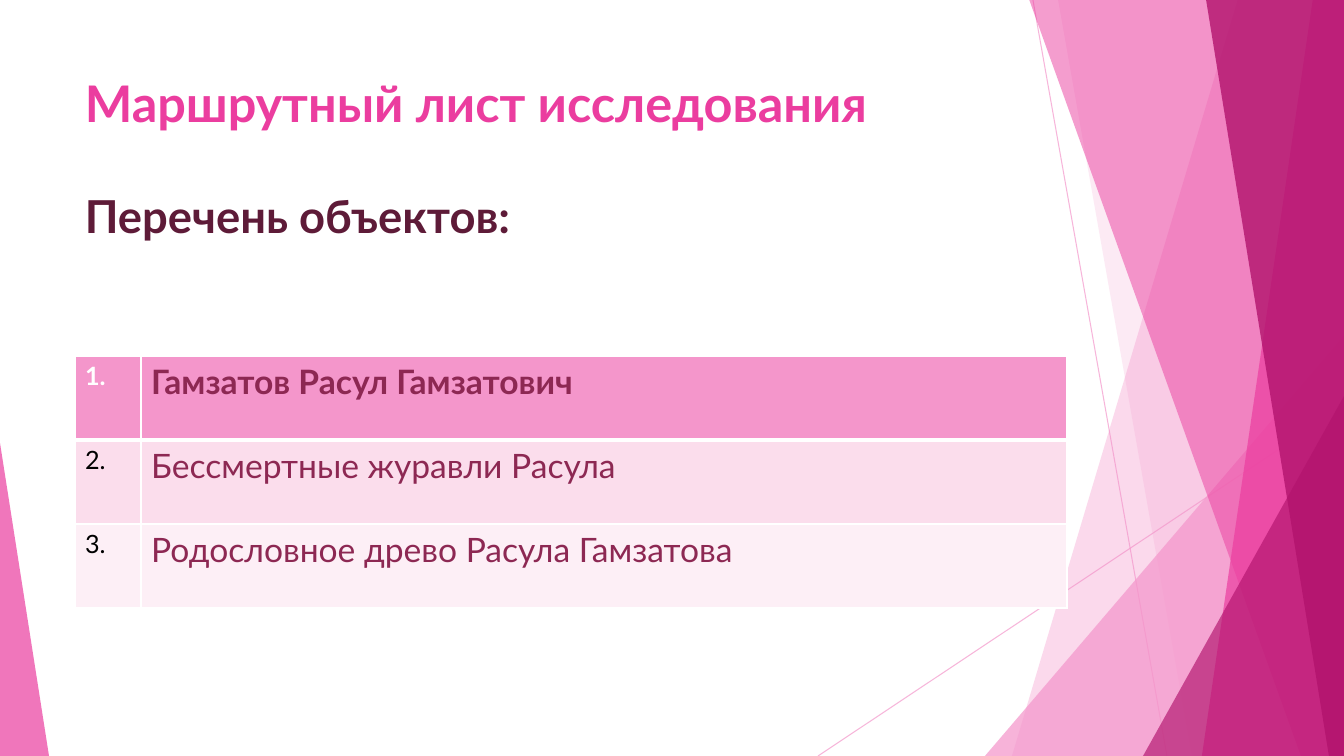
from pptx import Presentation, util as u
from pptx.dml.color import RGBColor
from pptx.enum import shapes as sh, text as tx
from pptx.oxml import parse_xml
from pptx.oxml.ns import nsdecls, qn
from lxml import etree

FONT = "Lato"
PINK, ROSE, WINE, WHITE = "F496CB", "EB3D9F", "B2136D", "FFFFFF"
WIDE, HIGH = 1344, 756

HEADS = [  # text, size, colour, space before
    ("Маршрутный лист исследования", 36, ROSE, 0),
    ("Перечень объектов:", 32.4, "5E1B38", 40),
]
ROWS = [  # text, fill, number colour, bold
    ("Гамзатов Расул Гамзатович", PINK, WHITE, True),
    ("Бессмертные журавли Расула", "FBDDEC", "000000", False),
    ("Родословное древо Расула Гамзатова", "FDEFF6", "000000", False),
]
COLS, ROW = (66, 926), 84
LINES = [(1033, 0, 1167, 756), (1344, 406, 818, 756)]
# Bands run to the right edge: top x, bottom x
# Wedges: left, top, width, height, apex position
DECOR = [
    ("band", (1238, 1012), PINK, 36),
    ("band", (1058, 1192), PINK, 20),
    ("wedge", (985, 336, 359, 420, 1), PINK, 72),
    ("band", (1029, 1301), ROSE, 50),
    ("band", (1313, 1202), ROSE, 70),
    ("band", (1206, 1329), WINE, 80),
    ("wedge", (1143, 396, 201, 360, 1), WINE, 66),
    ("wedge", (0, 443, 49, 313, 0), ROSE, 70),
]


def px(n):
    return u.Emu(round(n * 914400 / 100.8))


def rgb(code):
    return RGBColor.from_string(code)


def paint(fill, code, alpha=100):
    fill.solid()
    fill.fore_color.rgb = rgb(code)
    if alpha < 100:
        fade(fill._xPr, alpha)


def fade(node, alpha):
    clr = next(node.iter(qn("a:srgbClr")))
    etree.SubElement(clr, qn("a:alpha")).set("val", str(alpha * 1000))


def write(para, words, size, color, bold):
    run = para.add_run()
    run.text = words
    look = {"name": FONT, "size": u.Pt(size), "bold": bold}
    for key, val in look.items():
        setattr(run.font, key, val)
    run.font.color.rgb = rgb(color)


def edge(cell, base):
    props = cell._tc.get_or_add_tcPr()
    for spot, (side, wide) in enumerate(zip("LRTB", (1, 1, base[0], base[1]))):
        props.insert(spot, parse_xml(
            f'<a:ln{side} {nsdecls("a")} w="{wide * 12700}"><a:solidFill>'
            f'<a:srgbClr val="{WHITE}"/></a:solidFill></a:ln{side}>'))


prs = Presentation()
prs.slide_width, prs.slide_height = px(WIDE), px(HIGH)
slide = prs.slides.add_slide(prs.slide_layouts[6])
parts = slide.shapes

# Thin lines
for ends in LINES:
    line = parts.add_connector(sh.MSO_CONNECTOR.STRAIGHT, *map(px, ends))
    line.line.width = u.Pt(0.75)
    line.line.color.rgb = rgb(PINK)
    fade(line.line._ln, 70)
    etree.SubElement(line._element.spPr, qn("a:effectLst"))

# Bands and wedges
for kind, geo, color, alpha in DECOR:
    if kind == "band":
        top, low = geo
        pen = parts.build_freeform(top, -1, scale=px(1))
        pen.add_line_segments([(WIDE, -1), (WIDE, HIGH), (low, HIGH)])
        form = pen.convert_to_shape()
    else:
        *box, apex = geo
        form = parts.add_shape(sh.MSO_SHAPE.ISOSCELES_TRIANGLE, *map(px, box))
        form.adjustments[0] = apex
    form.shadow.inherit = False
    form.line.fill.background()
    paint(form.fill, color, alpha)

# Headings
frame = parts.add_textbox(*map(px, (75, 67, 948, 145))).text_frame
frame.word_wrap = True
frame.vertical_anchor = tx.MSO_ANCHOR.TOP
for i, (words, size, color, gap) in enumerate(HEADS):
    para = frame.add_paragraph() if i else frame.paragraphs[0]
    para.space_before = u.Pt(gap)
    write(para, words, size, color, True)

# Table of objects
area = (75, 356, sum(COLS), ROW * len(ROWS))
table = parts.add_table(len(ROWS), len(COLS), *map(px, area)).table
for col, wide in zip(table.columns, COLS):
    col.width = px(wide)
for r, (words, fill, color, bold) in enumerate(ROWS):
    table.rows[r].height = px(ROW)
    base = (3 if r == 1 else 1, 3 if r == 0 else 1)
    pair = ((f"{r + 1}.", 18, color), (words, 24, "8D2853"))
    for c, (label, size, ink) in enumerate(pair):
        cell = table.cell(r, c)
        paint(cell.fill, fill)
        edge(cell, base)
        write(cell.text_frame.paragraphs[0], label, size, ink, bold)

prs.save("out.pptx")
